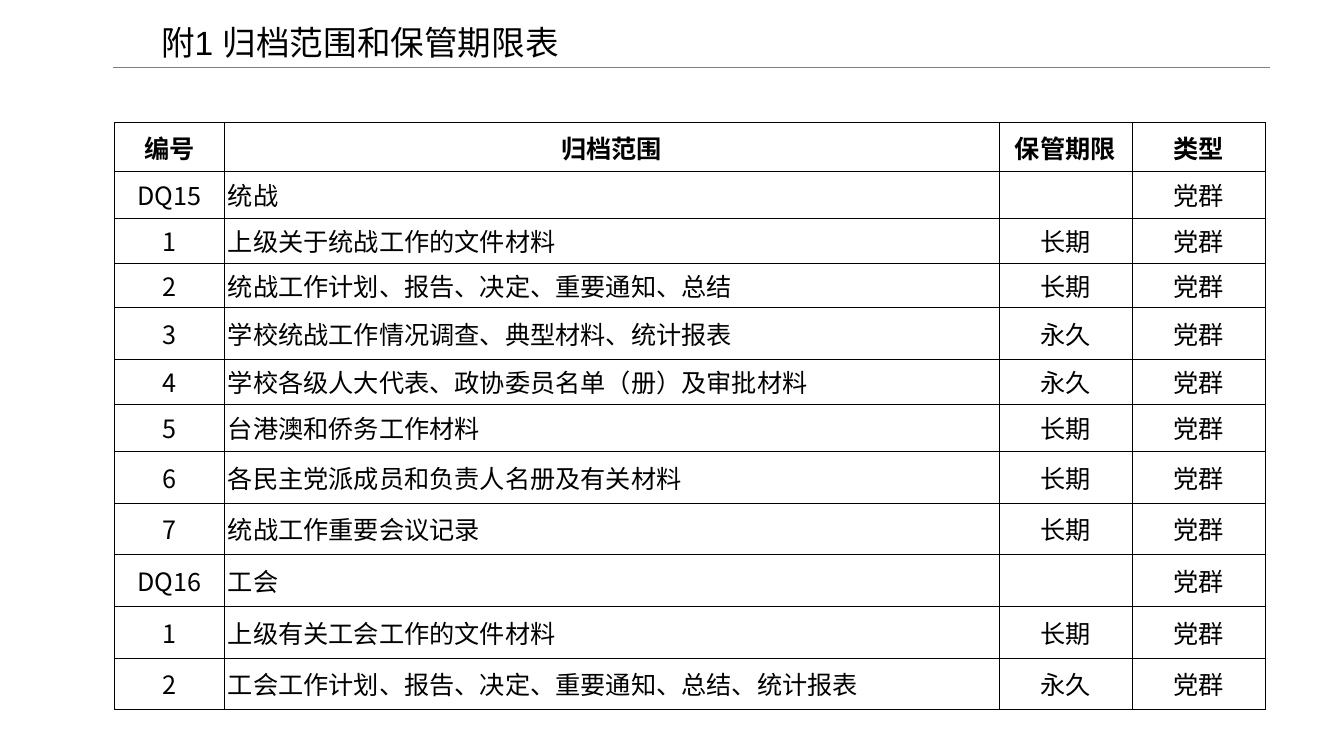
from pptx import Presentation
from pptx.dml.color import RGBColor
from pptx.enum import shapes, text
from pptx.oxml import ns, xmlchemy
from pptx.util import Pt

HEADERS = ["编号", "归档范围", "保管期限", "类型"]
CATEGORY = "党群"
RECORDS = [
    ("DQ15", "统战", ""),
    ("1", "上级关于统战工作的文件材料", "长期"),
    ("2", "统战工作计划、报告、决定、重要通知、总结", "长期"),
    ("3", "学校统战工作情况调查、典型材料、统计报表", "永久"),
    ("4", "学校各级人大代表、政协委员名单（册）及审批材料", "永久"),
    ("5", "台港澳和侨务工作材料", "长期"),
    ("6", "各民主党派成员和负责人名册及有关材料", "长期"),
    ("7", "统战工作重要会议记录", "长期"),
    ("DQ16", "工会", ""),
    ("1", "上级有关工会工作的文件材料", "长期"),
    ("2", "工会工作计划、报告、决定、重要通知、总结、统计报表", "永久"),
]
COLUMN_WIDTHS = [78, 553.5, 95, 95.5]
ROW_HEIGHTS = [35, 33.5, 32, 31.8, 37, 32.2, 33.5] + [36.9] * 5


def color(value):
    return RGBColor.from_string(value)


def add_element(parent, tag, **attributes):
    element = xmlchemy.OxmlElement(tag)
    for name, value in attributes.items():
        element.set(name, str(value))
    parent.append(element)
    return element


class SlideBuilder:
    ink = "000000"
    rule = "808080"
    body_font = "Noto Sans CJK SC"
    title_font = "Arial"

    def __init__(self, page):
        self.page = page

    def style(self, para, size, font, bold=False):
        for span in para.runs:
            span.font.size = Pt(size)
            span.font.name = font
            span.font.bold = bold
            span.font.color.rgb = color(self.ink)
            latin = span.font._element.find(ns.qn("a:latin"))
            east_asian = xmlchemy.OxmlElement("a:ea")
            east_asian.set("typeface", self.body_font)
            latin.addnext(east_asian)

    def title(self, wording, left, top, width, height):
        box = self.page.shapes.add_textbox(Pt(left), Pt(top), Pt(width), Pt(height))
        frame = box.text_frame
        frame.word_wrap = True
        frame.vertical_anchor = text.MSO_ANCHOR.MIDDLE
        frame.text = wording
        para = frame.paragraphs[0]
        para.line_spacing = 0.9
        self.style(para, 24, self.title_font)

    def line(self, left, right, top):
        connector = self.page.shapes.add_connector(
            shapes.MSO_CONNECTOR.STRAIGHT, Pt(left), Pt(top), Pt(right), Pt(top))
        connector.line.color.rgb = color(self.rule)
        connector.line.width = Pt(0.75)
        add_element(connector._element.spPr, "a:effectLst")

    def borders(self, cell):
        properties = cell._tc.get_or_add_tcPr()
        for side in ("a:lnL", "a:lnR", "a:lnT", "a:lnB"):
            border = add_element(properties, side, w=Pt(0.5))
            fill = add_element(border, "a:solidFill")
            add_element(fill, "a:srgbClr", val=self.ink)

    def cell(self, cell, wording, margin, centred, bold):
        cell.text = wording
        cell.vertical_anchor = text.MSO_ANCHOR.MIDDLE
        cell.margin_left = cell.margin_right = Pt(margin)
        cell.margin_top = cell.margin_bottom = Pt(margin)
        para = cell.text_frame.paragraphs[0]
        para.alignment = text.PP_ALIGN.CENTER if centred else text.PP_ALIGN.LEFT
        self.style(para, 18, self.body_font, bold)
        self.borders(cell)
        cell.fill.background()

    def table(self, rows, left, top, widths, heights):
        frame = self.page.shapes.add_table(
            len(rows), len(widths), Pt(left), Pt(top), Pt(sum(widths)), Pt(sum(heights)))
        table = frame.table
        table.first_row = table.horz_banding = False
        for column, width in zip(table.columns, widths):
            column.width = Pt(width)
        for row, height in zip(table.rows, heights):
            row.height = Pt(height)
        for r, row in enumerate(rows):
            for c, wording in enumerate(row):
                header = r == 0
                scope = c == 1 and not header
                margin = 2.88 if scope else 0 if header else 0.5
                self.cell(table.cell(r, c), wording, margin, not scope, header)


def main():
    deck = Presentation()
    deck.slide_width, deck.slide_height = Pt(960), Pt(540)
    builder = SlideBuilder(deck.slides.add_slide(deck.slide_layouts[6]))
    builder.line(80.6, 907.2, 48.2)
    builder.title("附1 归档范围和保管期限表", 108, 10, 796, 43)
    rows = [HEADERS] + [(*record, CATEGORY) for record in RECORDS]
    builder.table(rows, 82, 87.5, COLUMN_WIDTHS, ROW_HEIGHTS)
    deck.save("out.pptx")


if __name__ == "__main__":
    main()
